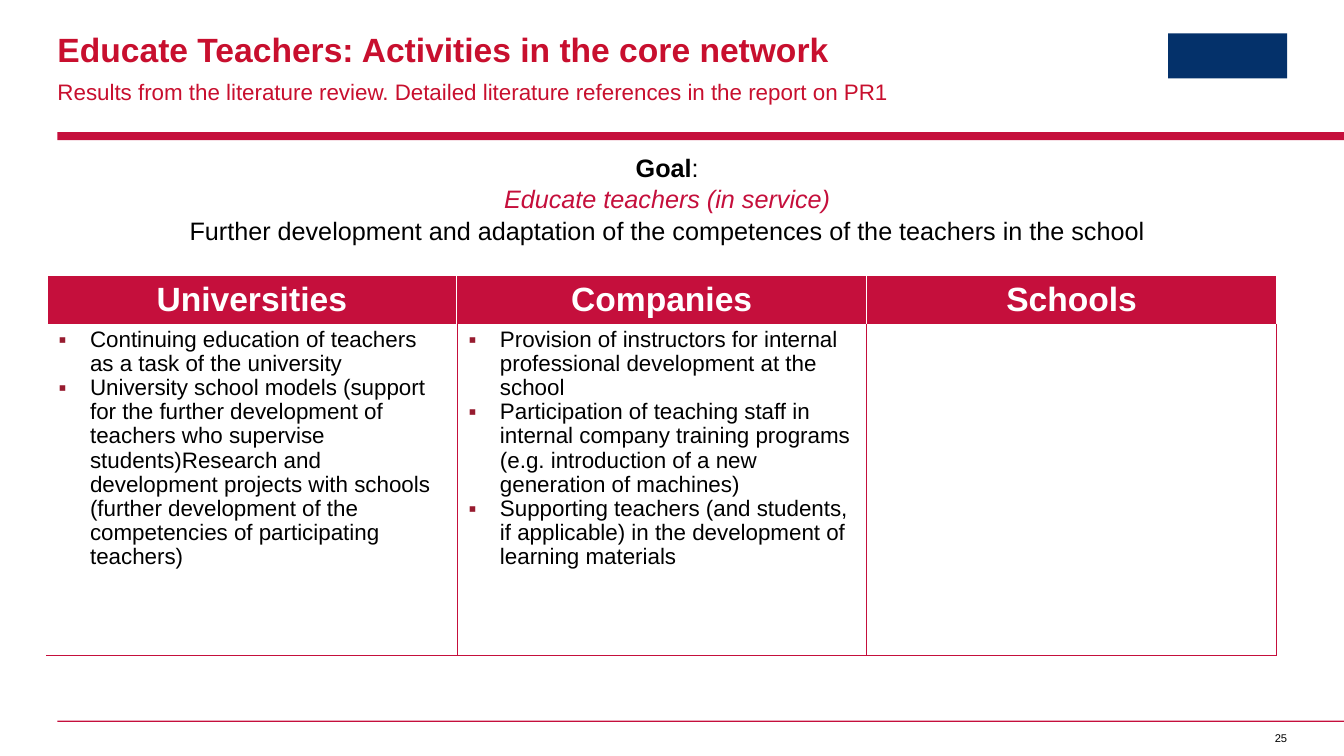
from pptx import Presentation
from pptx.dml.color import RGBColor
from pptx.enum.shapes import MSO_SHAPE as SHAPE
from pptx.enum.text import MSO_ANCHOR as ANCHOR, PP_ALIGN as ALIGN
from pptx.oxml import parse_xml
from pptx.oxml.ns import nsdecls
from pptx.util import Cm, Pt

COLORS = {"red": "C50F3C", "title": "C80F2E", "bullet": "971B2F",
          "navy": "04316A", "black": "000000", "white": "FFFFFF"}
LEFT, WIDTH = 1.45, 32.42
COLUMNS = {
    "Universities": [
        "Continuing education of teachers as a task of the university",
        "University school models (support for the further development of teachers "
        "who supervise students)Research and development projects with schools "
        "(further development of the competencies of participating teachers)",
    ],
    "Companies": [
        "Provision of instructors for internal professional development at the school",
        "Participation of teaching staff in internal company training programs "
        "(e.g. introduction of a new generation of machines)",
        "Supporting teachers (and students, if applicable) in the development of "
        "learning materials",
    ],
    "Schools": [],
}


def rgb(name):
    """Return the named colour."""
    return RGBColor.from_string(COLORS[name])


def set_font(font, size, color, bold=False):
    """Set size, colour and weight of a font."""
    font.name, font.size, font.bold = "Arial", Pt(size), bold
    font.color.rgb = rgb(color)


def add_block(s, x, y, w, h, color):
    """Add a plain filled rectangle."""
    sp = s.shapes.add_shape(SHAPE.RECTANGLE, Cm(x), Cm(y), Cm(w), Cm(h))
    sp.shadow.inherit = False
    sp.fill.solid()
    sp.fill.fore_color.rgb = rgb(color)
    sp.line.fill.background()


def add_text(s, x, y, w, h, inset=0.0):
    """Add an empty wrapping text box and return its text frame."""
    tf = s.shapes.add_textbox(Cm(x), Cm(y), Cm(w), Cm(h)).text_frame
    tf.word_wrap = True
    tf.margin_left = tf.margin_right = Cm(inset)
    tf.margin_top = tf.margin_bottom = Cm(inset / 2)
    return tf


def add_header(s, x, y, w):
    """Place title, subtitle, emblem block and the bar below them."""
    lines = [("Educate Teachers: Activities in the core network", 0, 0.91, 24, True, 0.9),
             ("Results from the literature review. Detailed literature references "
              "in the report on PR1", 1.07, 0.69, 16, False, 1.1)]
    for text, dy, h, size, bold, spacing in lines:
        p = add_text(s, x, y + dy, 23.7, h).paragraphs[0]
        p.text, p.line_spacing = text, spacing
        set_font(p.font, size, "title", bold)
    add_block(s, x + w - 4.43, y, 3, 1.14, "navy")
    add_block(s, x, y + 2.49, w, 0.2, "red")


def add_goal(s, x, y, w, h):
    """Place the centred goal statement."""
    tf = add_text(s, x, y, w, h, 0.25)
    lines = [[("Goal", True), (":", False)],
             [("Educate teachers (in service)", False)],
             [("Further development and adaptation of the competences of the teachers "
               "in the school", False)]]
    for i, runs in enumerate(lines):
        p = tf.paragraphs[0] if i == 0 else tf.add_paragraph()
        p.alignment, p.line_spacing = ALIGN.CENTER, 1.04
        set_font(p.font, 18, "red" if i == 1 else "black")
        p.font.italic = i == 1
        for text, bold in runs:
            r = p.add_run()
            r.text, r.font.bold = text, bold


def set_border(cell, side, color, width):
    """Draw one side of a cell; sides go in the order L, R, T, B before the fill."""
    tc_pr = cell._tc.get_or_add_tcPr()
    tc_pr.append(parse_xml(
        f'<a:ln{side} {nsdecls("a")} w="{Pt(width)}"><a:solidFill>'
        f'<a:srgbClr val="{COLORS[color]}"/></a:solidFill></a:ln{side}>'))


def add_bullet(p):
    """Give a paragraph a hanging square bullet."""
    p_pr = p._p.get_or_add_pPr()
    p_pr.set("marL", str(Cm(0.79)))
    p_pr.set("indent", str(-Cm(0.79)))
    for tag in (f'<a:buClr {nsdecls("a")}><a:srgbClr val="{COLORS["bullet"]}"/></a:buClr>',
                f'<a:buFont {nsdecls("a")} typeface="Arial"/>',
                f'<a:buChar {nsdecls("a")} char="▪"/>'):
        p_pr.append(parse_xml(tag))


def fill_header_cell(cell, title):
    """Fill a column heading."""
    for side, width in (("L", 0.5), ("R", 0.5), ("T", 1)):
        set_border(cell, side, "white", width)
    cell.fill.solid()
    cell.fill.fore_color.rgb = rgb("red")
    cell.vertical_anchor = ANCHOR.MIDDLE
    p = cell.text_frame.paragraphs[0]
    p.text, p.alignment = title, ALIGN.CENTER
    set_font(p.font, 24, "white", True)


def fill_body_cell(cell, items, first):
    """Fill a column with its bulleted activities."""
    set_border(cell, "L", "white" if first else "red", 1 if first else 0.25)
    for side in "RB":
        set_border(cell, side, "red", 0.25)
    cell.fill.background()
    tf = cell.text_frame
    for i, item in enumerate(items):
        p = tf.paragraphs[0] if i == 0 else tf.add_paragraph()
        p.text, p.line_spacing = item, 0.97
        add_bullet(p)
        set_font(p.font, 16, "black")


def add_activities(s, x, y, w, head_h, body_h):
    """Place the table of activities with one column per partner."""
    n = len(COLUMNS)
    table = s.shapes.add_table(2, n, Cm(x), Cm(y), Cm(w), Cm(head_h + body_h)).table
    table.horz_banding = table.first_row = False
    table.rows[0].height, table.rows[1].height = Cm(head_h), Cm(body_h)
    for col, (title, items) in enumerate(COLUMNS.items()):
        table.columns[col].width = Cm(w / n)
        fill_header_cell(table.cell(0, col), title)
        fill_body_cell(table.cell(1, col), items, col == 0)
    for cell in table.iter_cells():
        cell.margin_left = cell.margin_right = Cm(0.3)
        cell.margin_top = cell.margin_bottom = Cm(0.1)


def add_footer(s, x, y, w):
    """Place the bottom rule and the page number."""
    add_block(s, x, y, w, 0.03, "red")
    p = add_text(s, x + w - 2.43, y + 0.28, 1, 0.33).paragraphs[0]
    p.text, p.alignment = "25", ALIGN.RIGHT
    set_font(p.font, 8, "black")


def main():
    """Build the slide and save it."""
    prs = Presentation()
    prs.slide_width, prs.slide_height = Cm(33.87), Cm(19.05)
    s = prs.slides.add_slide(prs.slide_layouts[6])
    add_header(s, LEFT, 0.84, WIDTH)
    add_activities(s, 1.18, 6.95, 30.99, 1.17, 8.33)
    add_goal(s, LEFT, 3.68, 30.73, 2.57)
    add_footer(s, LEFT, 18.16, WIDTH)
    prs.save("out.pptx")


if __name__ == "__main__":
    main()
